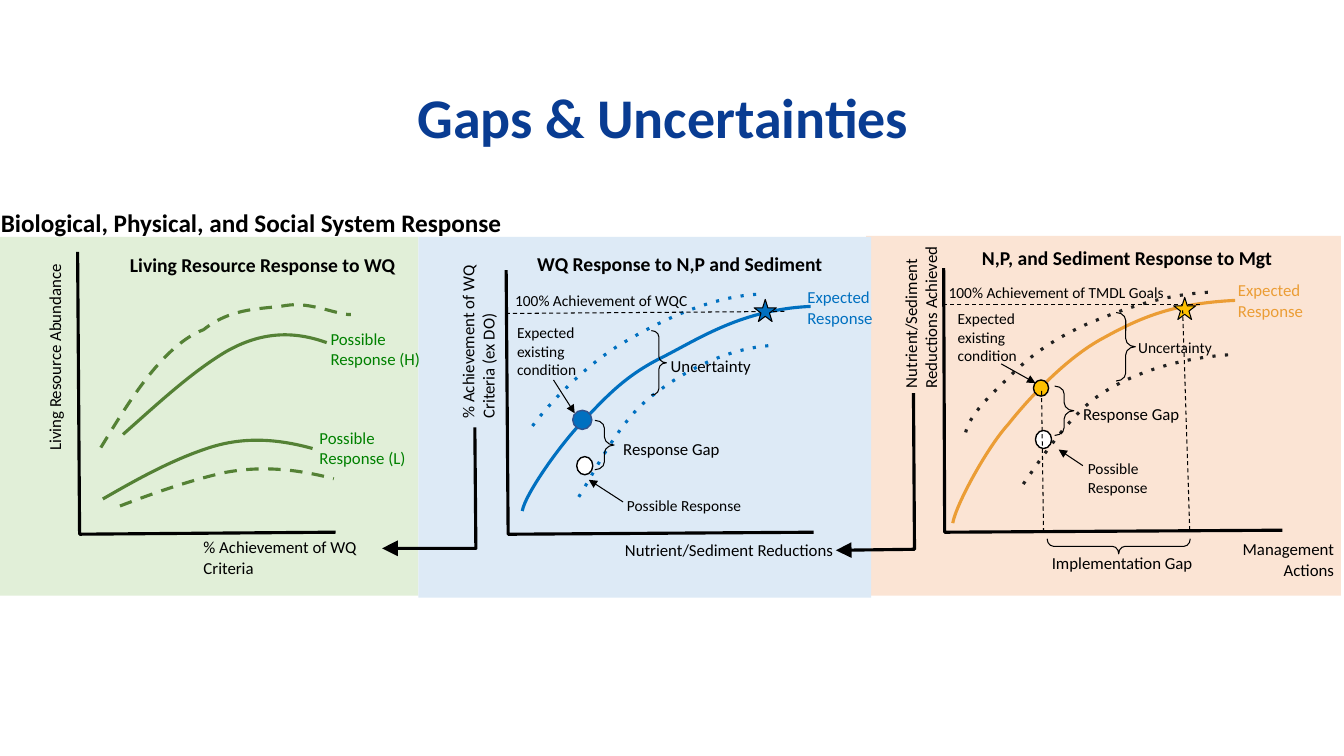
from dataclasses import dataclass
from typing import Any, NamedTuple

from lxml import etree
from pptx import Presentation, util as u
from pptx.dml.color import RGBColor
from pptx.enum import shapes, text
from pptx.oxml import ns
from pptx.slide import Slide

COLS, ROWS = 133.3, 75
CELL = u.Inches(0.1)
KIND = shapes.MSO_SHAPE
ALIGN = text.PP_ALIGN


@dataclass(frozen=True)
class Theme:
    font: str = "Calibri"
    navy: str = "093C92"
    black: str = "000000"
    white: str = "FFFFFF"
    blue: str = "0070C0"
    rim: str = "31538F"
    orange: str = "EB9D35"
    gold: str = "FFC000"
    leaf: str = "548135"
    green: str = "008000"
    coal: str = "212121"
    peach: str = "FBE4D4"
    mint: str = "E1EFD8"
    sky: str = "DDEAF6"
    title: float = 40
    head: float = 18
    panel: float = 14
    label: float = 12
    note: float = 11
    thick: float = 2.25
    edge: float = 1
    thin: float = 0.75


T = Theme()


class Box(NamedTuple):
    x: float
    y: float
    w: float
    h: float


class Point(NamedTuple):
    x: float
    y: float


@dataclass(frozen=True)
class Label:
    words: str
    box: Box
    size: float = T.label
    color: str = T.black
    bold: bool = False
    align: Any = None
    turn: float = 0


@dataclass(frozen=True)
class Trace:
    points: list[tuple[float, float]]
    color: str = T.black
    dash: str = ""
    tail: str = ""
    curved: bool = True


@dataclass(frozen=True)
class Link:
    start: Point
    end: Point
    dash: str = ""
    tail: str = ""


@dataclass(frozen=True)
class Mark:
    kind: Any
    box: Box
    fill: str = ""
    line: str = T.black
    width: float = T.thin
    turn: float = 0


PANELS = [
    Mark(KIND.RECTANGLE, Box(85.9, 23.4, 47.1, 35.7), T.peach, ""),
    Mark(KIND.RECTANGLE, Box(0, 23.5, 41.5, 35.6), T.mint, ""),
    Mark(KIND.RECTANGLE, Box(41.5, 23.5, 44.9, 35.8), T.sky, ""),
]
TRACES = [
    Trace([(7.7, 25), (7.9, 53), (33.3, 52.8)], curved=False),
    Trace([(50.2, 26.8), (50.4, 53), (80.7, 52.8)], curved=False),
    Trace([(93.6, 26.6), (93.7, 52.8), (127.2, 52.6)], curved=False),
    Trace([(47.1, 42.4), (47.2, 54.4), (37.9, 54.4)], tail="lg", curved=False),
    Trace([(90.6, 39), (90.7, 54.5), (82.9, 54.6)], tail="lg", curved=False),
    Trace([(122.5, 29.8), (116.5, 30.1), (113.3, 31.4), (109.5, 33.5), (105.7, 35.5),
           (101.9, 39.7), (100, 42.1), (97.9, 44.4), (94.8, 50.1), (94.5, 51.9)], T.orange),
    Trace([(80.4, 30.4), (73.7, 30.7), (69.5, 33.5), (65.8, 35.4), (62.1, 37.2),
           (60.2, 39.3), (58, 41.6), (55.7, 43.9), (52.1, 49), (51.8, 50.7)], T.blue),
    Trace([(11.9, 50.2), (15.3, 48.9), (18.7, 47.7), (22.2, 46.9),
           (25.8, 46.2), (29.3, 46.5), (33.1, 47.5)], T.leaf, "dash"),
    Trace([(10, 44.4), (12.4, 40.5), (16, 34.3), (20.2, 32.7), (23.1, 30.4),
           (26.1, 30.7), (28.4, 30.3), (30.8, 29.9), (33.6, 31.3), (34.8, 31.2)], T.leaf, "dash"),
    Trace([(10.2, 49.5), (13.5, 47.6), (16.9, 45.7), (20.5, 44.5),
           (24, 43.3), (27.4, 43.5), (31, 44.5)], T.leaf),
    Trace([(12.2, 43.1), (15.6, 40.1), (18.9, 37), (22.4, 34.9),
           (25.9, 32.9), (29.1, 32.8), (32.4, 34)], T.leaf),
    Trace([(121.8, 35.2), (117.5, 35.5), (113, 36.7), (109.5, 38.9),
           (106, 41), (102.7, 46.4), (101, 48.7)], T.coal, "dot"),
    Trace([(119.8, 29), (114.9, 29.3), (111.1, 30.8), (107.7, 32.2), (104.4, 33.7),
           (102, 35.4), (99.9, 37.6), (97.8, 39.6), (95.9, 41.5), (95.7, 43.3)], T.coal, "dot"),
    Trace([(76.2, 34.3), (71.7, 34.7), (67.5, 37), (64.4, 39.5),
           (61.3, 42), (59.1, 46.6), (57.4, 49.3)], T.blue, "dot"),
    Trace([(75, 29.2), (70.3, 29.5), (65.3, 31.9), (61.5, 34.2),
           (57.7, 36.5), (53.8, 40.7), (52.3, 43)], T.blue, "dot"),
]
LINKS = [
    Link(Point(119, 30.2), Point(93.4, 30.2), "dash"),
    Link(Point(77.8, 30.9), Point(50.3, 31.1), "dash"),
    Link(Point(99.3, 36.1), Point(102.7, 38), tail="med"),
    Link(Point(107.4, 46.2), Point(105, 44.6), tail="med"),
    Link(Point(54.9, 37.7), Point(57, 41), tail="med"),
    Link(Point(61.8, 49.8), Point(58.4, 47.6), tail="med"),
]
DROPS = [
    Link(Point(103.5, 52.8), Point(103.3, 38.6), "dash"),
    Link(Point(118, 52.6), Point(117.3, 30.8), "dash"),
]
MARKS = [
    Mark(KIND.OVAL, Box(102.5, 37.7, 1.5, 1.6), T.gold, width=T.edge),
    Mark(KIND.OVAL, Box(56.8, 40.7, 1.9, 1.9), T.blue, T.rim, T.edge),
    Mark(KIND.OVAL, Box(102.7, 42.7, 1.6, 1.8), T.white, width=T.edge),
    Mark(KIND.OVAL, Box(57.2, 45.3, 1.6, 1.8), T.white, width=T.edge),
    Mark(KIND.STAR_5_POINT, Box(116.4, 29.5, 2.2, 2.2), T.gold),
    Mark(KIND.STAR_5_POINT, Box(74.8, 29.7, 2.2, 2.2), T.blue),
    Mark(KIND.RIGHT_BRACE, Box(110.2, 47.1, 1.5, 14.2), turn=90),
    Mark(KIND.RIGHT_BRACE, Box(104.6, 38.3, 1.9, 4.9)),
    Mark(KIND.RIGHT_BRACE, Box(59, 41.7, 1.9, 4.9)),
    Mark(KIND.RIGHT_BRACE, Box(110.7, 31, 1.9, 6.8)),
    Mark(KIND.RIGHT_BRACE, Box(64.6, 32.8, 1.5, 6.4)),
]
LABELS = [
    Label("Gaps & Uncertainties", Box(35.8, 7.7, 59.9, 7.7), T.title, T.navy, True, ALIGN.CENTER),
    Label("Biological, Physical, and Social System Response", Box(-0.9, 20.1, 67.5, 4), T.head, bold=True),
    Label("Living Resource Response to WQ", Box(11.9, 24.6, 30.2, 3.4), T.panel, bold=True),
    Label("WQ Response to N,P and Sediment", Box(52.3, 24.5, 35.2, 3.4), T.panel, bold=True),
    Label("N,P, and Sediment Response to Mgt", Box(96.4, 23.9, 38.2, 3.4), T.panel, bold=True),
    Label("Living Resource Abundance", Box(-5.1, 33.7, 21, 3), turn=270),
    Label("% Achievement of WQ Criteria (ex DO)", Box(38.1, 30.7, 18.6, 5), turn=270),
    Label("Nutrient/Sediment Reductions Achieved", Box(83, 28.7, 16.6, 5), turn=270),
    Label("% Achievement of WQ Criteria", Box(19.2, 52.8, 18.6, 5)),
    Label("Nutrient/Sediment Reductions", Box(61, 53.1, 31.9, 3)),
    Label("Management Actions", Box(118.4, 53, 14.9, 5), align=ALIGN.RIGHT),
    Label("Possible Response (H)", Box(31.8, 32.1, 12.1, 5), color=T.green),
    Label("Possible Response (L)", Box(30.7, 41.9, 12.1, 5), color=T.green),
    Label("Expected Response", Box(79.1, 28, 14.9, 5), color=T.blue),
    Label("Expected Response", Box(121.8, 27.3, 14.5, 5), color=T.orange),
    Label("100% Achievement of WQC", Box(50.1, 28.4, 22.1, 2.9), T.note),
    Label("100% Achievement of TMDL Goals", Box(93.1, 27.6, 25.3, 2.9), T.note),
    Label("Expected existing condition", Box(50.3, 31.6, 12.1, 6.6), T.note),
    Label("Expected existing condition", Box(94, 30.2, 7.9, 6.6), T.note),
    Label("Possible Response", Box(61.2, 48.7, 13.4, 2.9), T.note),
    Label("Possible Response", Box(106.9, 45.1, 12.1, 4.7), T.note),
    Label("Uncertainty", Box(61.5, 34.8, 18, 3), align=ALIGN.CENTER),
    Label("Uncertainty", Box(111.9, 33.1, 12.7, 2.9), T.note),
    Label("Response Gap", Box(57.6, 43, 18, 3), align=ALIGN.CENTER),
    Label("Response Gap", Box(103.2, 39.6, 18, 3), align=ALIGN.CENTER),
    Label("Implementation Gap", Box(102.3, 54.3, 18, 3), align=ALIGN.CENTER),
]


def span(*cells: float) -> list[int]:
    return [round(cell * CELL) for cell in cells]


def ink(item: Any, color: str, width: float, dash: str = "", tail: str = "") -> None:
    item.line.color.rgb = RGBColor.from_string(color)
    item.line.width = u.Pt(width)
    line = item.element.spPr.find(ns.qn("a:ln"))
    if dash:
        etree.SubElement(line, ns.qn("a:prstDash"), val=dash)
    if tail:
        etree.SubElement(line, ns.qn("a:tailEnd"), type="triangle", w=tail, len=tail)


def draw_trace(page: Slide, trace: Trace) -> None:
    first, *rest = [span(*point) for point in trace.points]
    pen = page.shapes.build_freeform(*first)
    pen.add_line_segments(rest, close=False)
    item = pen.convert_to_shape()
    item.shadow.inherit = False
    item.fill.background()
    ink(item, trace.color, T.thick, trace.dash, trace.tail)
    if trace.curved:
        track = item.element.find(".//" + ns.qn("a:path"))
        legs = track.findall(ns.qn("a:lnTo"))
        for start in range(0, len(legs), 3):
            bend = etree.SubElement(track, ns.qn("a:cubicBezTo"))
            for leg in legs[start:start + 3]:
                bend.append(leg[0])
                track.remove(leg)


def draw_link(page: Slide, link: Link) -> None:
    item = page.shapes.add_connector(shapes.MSO_CONNECTOR.STRAIGHT, *span(*link.start, *link.end))
    ink(item, T.black, T.thin, link.dash, link.tail)
    etree.SubElement(item.element.spPr, ns.qn("a:effectLst"))


def draw_mark(page: Slide, mark: Mark) -> None:
    item = page.shapes.add_shape(mark.kind, *span(*mark.box))
    item.shadow.inherit = False
    item.rotation = mark.turn
    if mark.kind == KIND.RIGHT_BRACE:
        item.adjustments[0] = 0.42
    if mark.fill:
        item.fill.solid()
        item.fill.fore_color.rgb = RGBColor.from_string(mark.fill)
    else:
        item.fill.background()
    if mark.line:
        ink(item, mark.line, mark.width)
    else:
        item.line.fill.background()


def draw_label(page: Slide, label: Label) -> None:
    item = page.shapes.add_textbox(*span(*label.box))
    item.rotation = label.turn
    frame = item.text_frame
    frame.word_wrap = True
    frame.auto_size = text.MSO_AUTO_SIZE.SHAPE_TO_FIT_TEXT
    line = frame.paragraphs[0]
    line.text = label.words
    line.alignment = label.align
    font = line.font
    font.name, font.size, font.bold = T.font, u.Pt(label.size), label.bold
    font.color.rgb = RGBColor.from_string(label.color)


def main() -> None:
    deck = Presentation()
    deck.slide_width, deck.slide_height = span(COLS, ROWS)
    page = deck.slides.add_slide(deck.slide_layouts[6])
    layers = [(draw_mark, PANELS), (draw_trace, TRACES), (draw_link, LINKS),
              (draw_mark, MARKS), (draw_label, LABELS), (draw_link, DROPS)]
    for draw, items in layers:
        for item in items:
            draw(page, item)
    deck.save("out.pptx")


if __name__ == "__main__":
    main()
